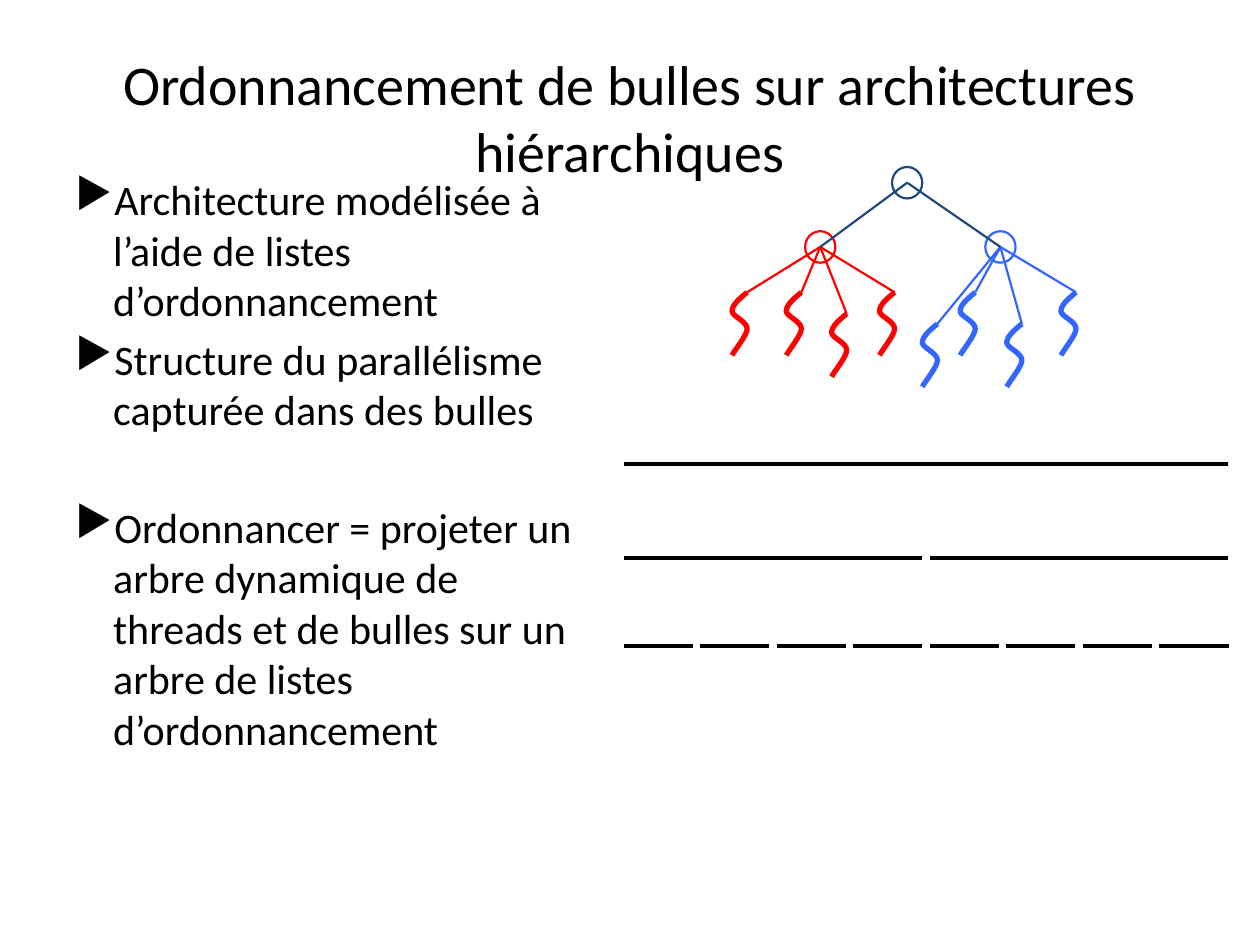
from lxml import etree
from pptx import Presentation
from pptx import util as u
from pptx.dml.color import RGBColor
from pptx.enum import shapes, text
from pptx.oxml import ns

COLOURS = {"ink": "000000", "paper": "FFFFFF", "root": "1F497D",
           "red": "FF0000", "blue": "3366FF"}
FONT = "Calibri"
TITLE = "Ordonnancement de bulles sur architectures hiérarchiques"
POINTS = [
    ("Architecture modélisée à l’aide de listes d’ordonnancement", 4.8),
    ("Structure du parallélisme capturée dans des bulles", 4.8),
    ("Ordonnancer = projeter un arbre dynamique de threads et de bulles "
     "sur un arbre de listes d’ordonnancement", 38.5),
]
ROOT = (7.2, 1.45)
BUBBLES = [
    ("red", (6.51, 1.96), [(6.72, 2.49), (5.93, 2.32), (6.36, 2.32), (7.1, 2.32)]),
    ("blue", (7.94, 1.96), [(7.44, 2.57), (7.74, 2.32), (8.11, 2.57), (8.54, 2.32)]),
]
THREAD_CURVE = [(-0.06, 0.05), (-0.12, 0.1), (-0.12, 0.15),
                (-0.12, 0.19), (0, 0.23), (0, 0.29),
                (0, 0.34), (-0.1, 0.46), (-0.12, 0.5)]
LIST_LEVELS = [(1, 3.68), (2, 4.43), (8, 5.13)]
LIST_LEFT, LIST_RIGHT, LIST_GAP = 4.95, 9.75, 0.06


def colour(name):
    return RGBColor.from_string(COLOURS[name])


def apply_format(target, values):
    for name, value in values.items():
        setattr(target, name, value)


def style_line(item, name, width):
    item.line.color.rgb = colour(name)
    item.line.width = u.Pt(width)


def write_span(para, words, size):
    span = para.add_run()
    span.text = words
    apply_format(span.font, {"name": FONT, "size": u.Pt(size)})
    span.font.color.rgb = colour("ink")


def add_title(page):
    box = page.shapes.title
    apply_format(box, {"left": u.Inches(0.5), "top": u.Inches(0.3),
                       "width": u.Inches(9), "height": u.Inches(1.25)})
    apply_format(box.text_frame, {"vertical_anchor": text.MSO_ANCHOR.MIDDLE,
                                  "auto_size": text.MSO_AUTO_SIZE.NONE,
                                  "word_wrap": True})
    para = box.text_frame.paragraphs[0]
    para.alignment = text.PP_ALIGN.CENTER
    write_span(para, TITLE, 32)


def add_points(page):
    box = page.shapes.add_textbox(u.Inches(0.5), u.Inches(1.33),
                                  u.Inches(4.31), u.Inches(5.83))
    frame = box.text_frame
    frame.word_wrap = True
    for index, (words, space) in enumerate(POINTS):
        para = frame.add_paragraph() if index else frame.paragraphs[0]
        para.space_before = u.Pt(space)
        write_span(para, words, 24)
        settings = para._p.get_or_add_pPr()
        settings.set("marL", str(u.Inches(0.3)))
        settings.set("indent", str(-u.Inches(0.3)))
        etree.SubElement(settings, ns.qn("a:buChar")).set("char", "▶")


def add_line(page, start, end, name, width):
    line = page.shapes.add_connector(
        shapes.MSO_CONNECTOR.STRAIGHT, *map(u.Inches, start + end))
    style_line(line, name, width)
    etree.SubElement(line._element.spPr, ns.qn("a:effectLst"))


def add_bubble(page, centre, name):
    width, height = 0.24, 0.25
    bubble = page.shapes.add_shape(
        shapes.MSO_SHAPE.OVAL,
        u.Inches(centre[0] - width / 2), u.Inches(centre[1] - height / 2),
        u.Inches(width), u.Inches(height))
    bubble.shadow.inherit = False
    bubble.fill.solid()
    bubble.fill.fore_color.rgb = colour("paper")
    style_line(bubble, name, 1.25)


def add_thread(page, head, name):
    x, y = head
    builder = page.shapes.build_freeform(u.Inches(x), u.Inches(y))
    builder.add_line_segments(
        [(u.Inches(x + dx), u.Inches(y + dy)) for dx, dy in THREAD_CURVE],
        close=False)
    thread = builder.convert_to_shape()
    segments = thread._element.xpath(".//a:lnTo")
    for first in range(0, len(segments), 3):
        curve = etree.Element(ns.qn("a:cubicBezTo"))
        segments[first].addprevious(curve)
        for segment in segments[first:first + 3]:
            curve.append(segment[0])
            segment.getparent().remove(segment)
    thread.shadow.inherit = False
    thread.fill.background()
    style_line(thread, name, 3)


def add_lists(page):
    for count, y in LIST_LEVELS:
        step = (LIST_RIGHT - LIST_LEFT + LIST_GAP) / count
        for index in range(count):
            left = LIST_LEFT + index * step
            add_line(page, (left, y), (left + step - LIST_GAP, y), "ink", 2.25)


def add_tree(page):
    for name, centre, heads in BUBBLES:
        add_bubble(page, centre, name)
        for head in heads:
            add_thread(page, head, name)
            add_line(page, centre, head, name, 1.25)
    add_bubble(page, ROOT, "root")
    for name, centre, heads in BUBBLES:
        add_line(page, ROOT, centre, "root", 1.25)


def main():
    deck = Presentation()
    apply_format(deck, {"slide_width": u.Inches(10), "slide_height": u.Inches(7.5)})
    page = deck.slides.add_slide(deck.slide_layouts[5])
    add_title(page)
    add_lists(page)
    add_points(page)
    add_tree(page)
    deck.save("out.pptx")


if __name__ == "__main__":
    main()
